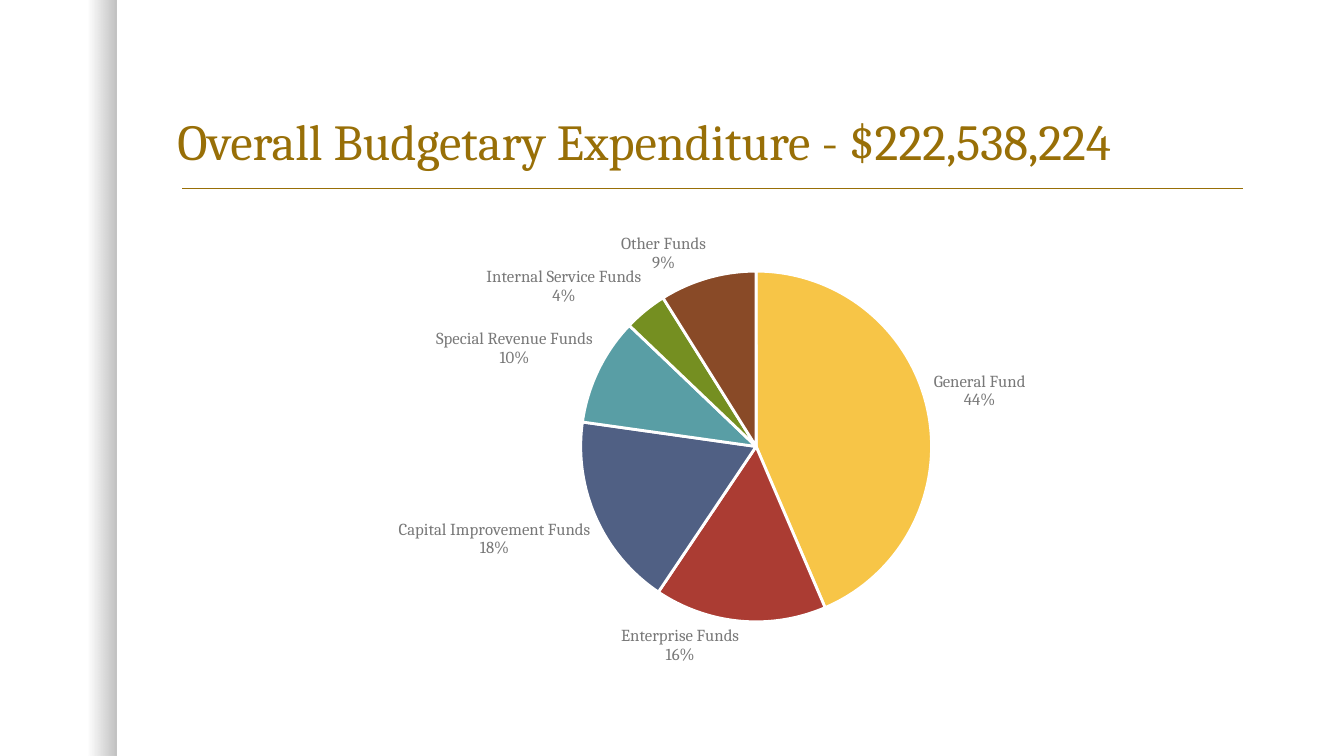
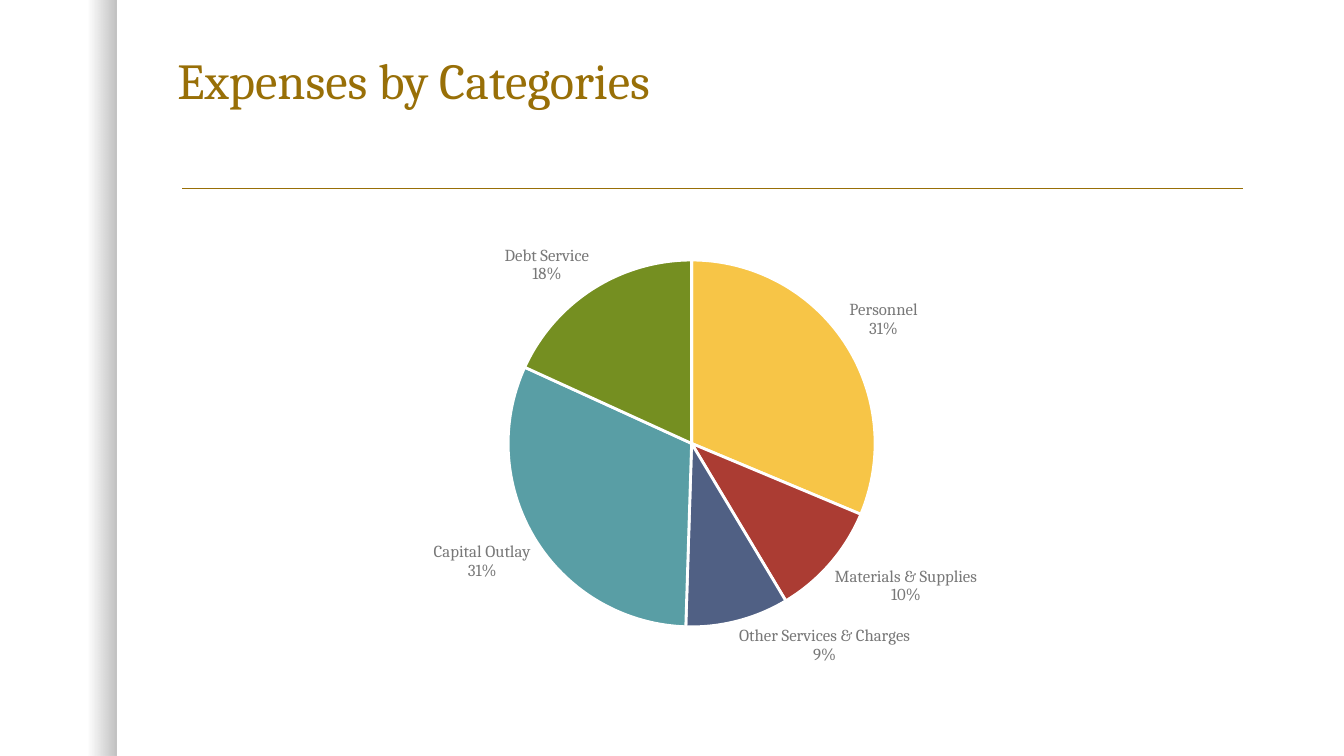
"""Build two budget slides, each with a titled pie chart."""
import lxml.etree
import pptx
import pptx.chart.data
import pptx.dml.color
import pptx.enum.chart
import pptx.enum.shapes
import pptx.enum.text
import pptx.oxml
import pptx.oxml.ns
import pptx.util

Inches, Pt = pptx.util.Inches, pptx.util.Pt
RGB = pptx.dml.color.RGBColor
qn = pptx.oxml.ns.qn

SLIDES = [
    {
        "title": "Overall Budgetary Expenditure - $222,538,224",
        "base": 0.05,
        "pie": (7.5, 4.43, 1.74),
        "data": [
            ("General Fund", 44),
            ("Enterprise Funds", 16),
            ("Capital Improvement Funds", 18),
            ("Special Revenue Funds", 10),
            ("Internal Service Funds", 4),
            ("Other Funds", 9),
        ],
    },
    {
        "title": "Expenses by Categories",
        "base": 0.65,
        "pie": (6.86, 4.4, 1.82),
        "data": [
            ("Personnel", 31),
            ("Materials & Supplies", 10),
            ("Other Services & Charges", 9),
            ("Capital Outlay", 31),
            ("Debt Service", 18),
        ],
    },
]

FACE = "Cambria"
GOLD = RGB(0x98, 0x6F, 0x07)
GRAY = RGB(0x78, 0x78, 0x78)
DARK = RGB(0x30, 0x30, 0x30)
BLACK = RGB(0, 0, 0)
WHITE = RGB(0xFF, 0xFF, 0xFF)
SLICES = [
    RGB(0xF7, 0xC5, 0x47), RGB(0xAB, 0x3C, 0x33), RGB(0x50, 0x60, 0x84),
    RGB(0x59, 0x9E, 0xA5), RGB(0x75, 0x8F, 0x21), RGB(0x89, 0x4A, 0x27),
]
TITLE = (1.66, 0.42, 10.75, 1.33)
CHART = (1.66, 2.17, 10.75, 4.58)
BAND = (0, 0, 1.16, 7.5)
RULE = (1.81, 1.87, 12.33, 1.87)
FADE = [(0.75, 0), (1, 25000)]


def put(item, **values):
    """Set each named value on the item."""
    for name, value in values.items():
        setattr(item, name, value)


def style(font, size, color):
    """Apply face, size and colour to a font."""
    put(font, name=FACE, size=Pt(size))
    font.color.rgb = color


def inch(box):
    """Turn plain numbers into lengths."""
    return [Inches(side) for side in box]


def dress(layout, slide):
    """Give the layout its title place, shaded band and gold rule."""
    for holder in list(layout.placeholders):
        if holder.placeholder_format.idx:
            holder.element.getparent().remove(holder.element)
    put(layout.placeholders[0], **dict(zip(("left", "top", "width", "height"), inch(TITLE))))

    band = slide.shapes.add_shape(pptx.enum.shapes.MSO_SHAPE.RECTANGLE, *inch(BAND))
    band.shadow.inherit = False
    band.line.fill.background()
    band.fill.gradient()
    band.fill.gradient_angle = 0
    for stop, (place, _) in zip(band.fill.gradient_stops, FADE):
        stop.position = place
        stop.color.rgb = BLACK
    for color, (_, alpha) in zip(band.element.spPr.iter(qn("a:srgbClr")), FADE):
        lxml.etree.SubElement(color, qn("a:alpha")).set("val", str(alpha))

    rule = slide.shapes.add_connector(
        pptx.enum.shapes.MSO_CONNECTOR.STRAIGHT, *inch(RULE))
    rule.line.width = Pt(1)
    rule.line.color.rgb = GOLD
    lxml.etree.SubElement(rule.element.spPr, qn("a:effectLst"))

    for spot, shape in enumerate((band, rule), 2):
        layout.shapes.element.insert(spot, shape.element)


def head(slide, text, base):
    """Write the slide title above the given bottom inset."""
    frame = slide.shapes.title.text_frame
    frame.text = text
    put(frame, word_wrap=True, margin_bottom=Inches(base),
        vertical_anchor=pptx.enum.text.MSO_ANCHOR.BOTTOM,
        auto_size=pptx.enum.text.MSO_AUTO_SIZE.NONE)
    line = frame.paragraphs[0]
    put(line, line_spacing=0.9, alignment=pptx.enum.text.PP_ALIGN.LEFT)
    style(line.runs[0].font, 36, GOLD)


def place(chart, pie):
    """Fix the pie by its centre and radius on the slide."""
    midx, midy, half = pie
    left, top, width, height = CHART
    area = chart.element.find(".//" + qn("c:plotArea"))
    for old in area.findall(qn("c:layout")):
        area.remove(old)
    layout = pptx.oxml.parse_xml(
        '<c:layout xmlns:c="http://schemas.openxmlformats.org/drawingml/2006/chart"/>')
    manual = lxml.etree.SubElement(layout, qn("c:manualLayout"))
    values = {
        "layoutTarget": "inner", "xMode": "edge", "yMode": "edge",
        "x": (midx - half - left) / width, "y": (midy - half - top) / height,
        "w": 2 * half / width, "h": 2 * half / height,
    }
    for name, value in values.items():
        lxml.etree.SubElement(manual, qn("c:" + name)).set("val", str(value))
    area.insert(0, layout)


def draw(slide, data, pie):
    """Add the pie chart with its labels."""
    names, values = zip(*data)
    source = pptx.chart.data.CategoryChartData()
    source.categories = names
    source.add_series("Series 1", values)
    chart = slide.shapes.add_chart(
        pptx.enum.chart.XL_CHART_TYPE.PIE, *inch(CHART), source).chart
    put(chart, has_title=False, has_legend=False)
    style(chart.font, 10, DARK)
    plot = chart.plots[0]
    plot.vary_by_categories = True
    series = plot.series[0]
    for spot, color in enumerate(SLICES[:len(data)]):
        form = series.points[spot].format
        form.fill.solid()
        form.fill.fore_color.rgb = color
        form.line.width = Pt(2)
        form.line.color.rgb = WHITE

    labels = series.data_labels
    put(labels, show_percentage=True, show_category_name=True, show_value=False,
        number_format="0%", number_format_is_linked=False,
        position=pptx.enum.chart.XL_LABEL_POSITION.OUTSIDE_END)
    style(labels.font, 12, GRAY)
    split = lxml.etree.Element(qn("c:separator"))
    split.text = "\n"
    chart.element.find(".//" + qn("c:showBubbleSize")).addnext(split)
    place(chart, pie)


def main():
    """Make and save the deck."""
    deck = pptx.Presentation()
    put(deck, slide_width=Inches(13.33), slide_height=Inches(7.5))
    layout = deck.slide_layouts[5]
    for spot, page in enumerate(SLIDES):
        slide = deck.slides.add_slide(layout)
        if spot == 0:
            dress(layout, slide)
        head(slide, page["title"], page["base"])
        draw(slide, page["data"], page["pie"])
    deck.save("out.pptx")


if __name__ == "__main__":
    main()
